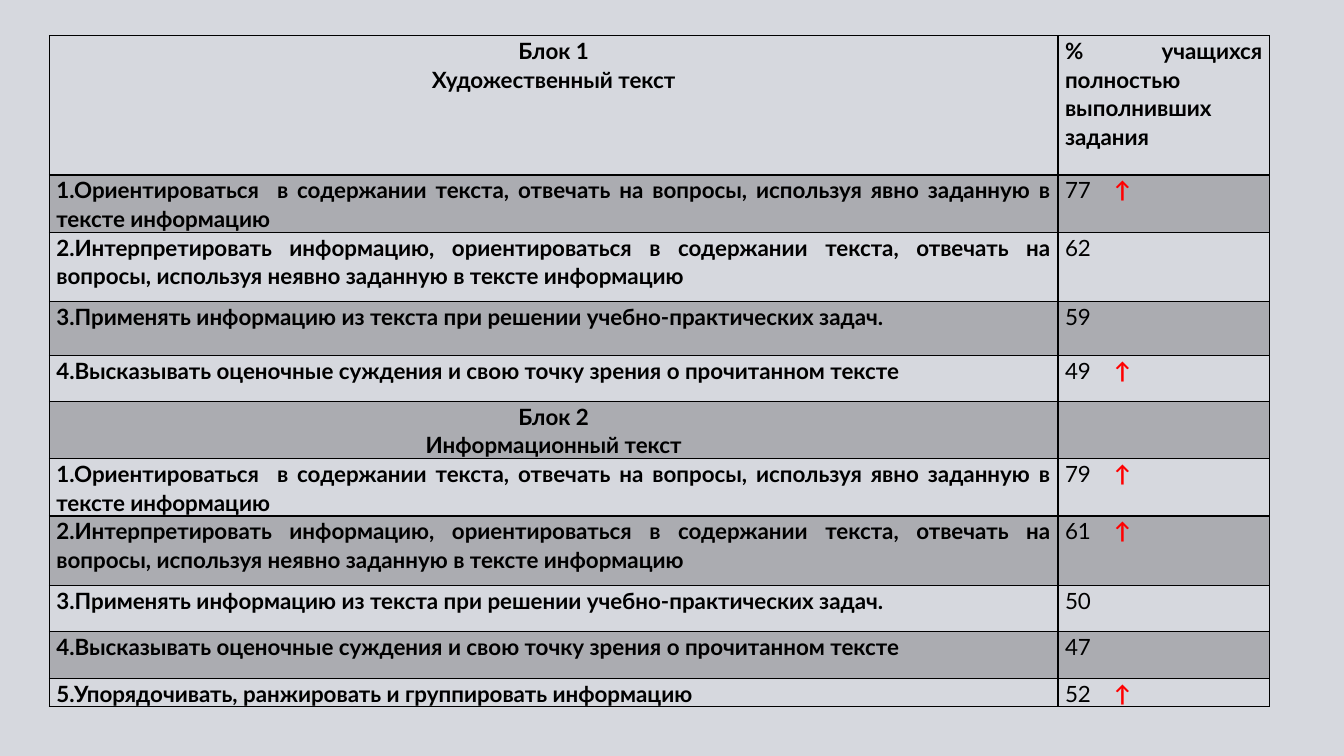
from lxml import etree
from pptx import Presentation, util as u
from pptx.dml.color import RGBColor
from pptx.enum import text
from pptx.oxml.ns import qn

ARROW = "↑"
FIND = ("1.Ориентироваться  в содержании текста, отвечать на вопросы, "
        "используя явно заданную в тексте информацию")
INTERPRET = ("2.Интерпретировать информацию, ориентироваться в содержании текста, "
             "отвечать на вопросы, используя неявно заданную в тексте информацию")
APPLY = "3.Применять информацию из текста при решении учебно-практических задач."
JUDGE = "4.Высказывать оценочные суждения и свою точку зрения о прочитанном тексте"
ARRANGE = "5.Упорядочивать, ранжировать и группировать информацию"

# Row height, skill or block title lines, result, whether the result rose
ROWS = [
    (99.4, ("Блок 1", "Художественный текст"),
     "% учащихся полностью выполнивших задания", False),
    (38.9, FIND, "77", True),
    (49.7, INTERPRET, "62", False),
    (38.2, APPLY, "59", False),
    (33.1, JUDGE, "49", True),
    (38.9, ("Блок 2", "Информационный текст"), "", False),
    (38.9, FIND, "79", True),
    (49.7, INTERPRET, "61", True),
    (33.1, APPLY, "50", False),
    (33.1, JUDGE, "47", False),
    (19.4, ARRANGE, "52", True),
]


def color(value):
    return RGBColor.from_string(value)


class SlideBuilder:
    background, ink, accent = "D6D8DE", "000000", "FF0000"
    font = {"name": "Lato", "size": u.Pt(16)}
    margins = {"margin_left": u.Pt(5), "margin_right": u.Pt(5),
               "margin_top": 0, "margin_bottom": 0}
    arrow_stop = u.Pt(35)

    def __init__(self, presentation):
        self.slide = presentation.slides.add_slide(presentation.slide_layouts[6])
        fill = self.slide.background.fill
        fill.solid()
        fill.fore_color.rgb = color(self.background)

    def table(self, left, top, widths, heights):
        shape = self.slide.shapes.add_table(
            len(heights), len(widths), u.Pt(left), u.Pt(top),
            u.Pt(sum(widths)), u.Pt(sum(heights)))
        table = shape.table
        table.first_row = table.horz_banding = False
        for column, width in zip(table.columns, widths):
            column.width = u.Pt(width)
        for row, height in zip(table.rows, heights):
            row.height = u.Pt(height)
        return table

    def cell(self, cell, shaded, top=1, bottom=1):
        for name, value in self.margins.items():
            setattr(cell, name, value)
        properties = cell._tc.get_or_add_tcPr()
        for side, width in (("L", 1), ("R", 1), ("T", top), ("B", bottom)):
            line = etree.SubElement(properties, qn(f"a:ln{side}"), w=str(u.Pt(width)))
            paint = etree.SubElement(line, qn("a:solidFill"))
            etree.SubElement(paint, qn("a:srgbClr"), val=self.ink)
        if shaded:
            cell.fill.solid()
            cell.fill.fore_color.rgb = color(self.ink)
            tint = properties.find(f"{qn('a:solidFill')}/{qn('a:srgbClr')}")
            etree.SubElement(tint, qn("a:alpha"), val="20000")
        else:
            cell.fill.background()

    def run(self, paragraph, words, bold, ink):
        run = paragraph.add_run()
        run.text = words
        for name, value in {**self.font, "bold": bold}.items():
            setattr(run.font, name, value)
        run.font.color.rgb = color(ink)

    def paragraphs(self, cell, lines, bold=True, centered=False, arrow=False):
        frame = cell.text_frame
        align = text.PP_ALIGN.CENTER if centered else text.PP_ALIGN.JUSTIFY
        for index, words in enumerate(lines):
            paragraph = frame.add_paragraph() if index else frame.paragraphs[0]
            paragraph.alignment = align
            paragraph.line_spacing = 1.07
            if words:
                self.run(paragraph, words + ("\t" if arrow else ""), bold, self.ink)
            if arrow:
                stops = etree.SubElement(paragraph._p.get_or_add_pPr(), qn("a:tabLst"))
                etree.SubElement(stops, qn("a:tab"), pos=str(self.arrow_stop), algn="l")
                self.run(paragraph, ARROW, True, self.accent)


def main():
    presentation = Presentation()
    presentation.slide_width, presentation.slide_height = u.Pt(960), u.Pt(540)
    builder = SlideBuilder(presentation)

    # Results table: every second row is shaded, a thick rule closes the header
    table = builder.table(35.3, 25.5, [720.5, 151], [row[0] for row in ROWS])
    for index, (_, skill, result, rose) in enumerate(ROWS):
        skill_cell, result_cell = table.cell(index, 0), table.cell(index, 1)
        for cell in (skill_cell, result_cell):
            builder.cell(cell, shaded=index % 2 == 1,
                         top=2 if index == 1 else 1, bottom=2 if index == 0 else 1)
        is_block = isinstance(skill, tuple)
        builder.paragraphs(skill_cell, skill if is_block else [skill], centered=is_block)
        builder.paragraphs(result_cell, [result], bold=is_block, arrow=rose)

    presentation.save("out.pptx")


if __name__ == "__main__":
    main()
